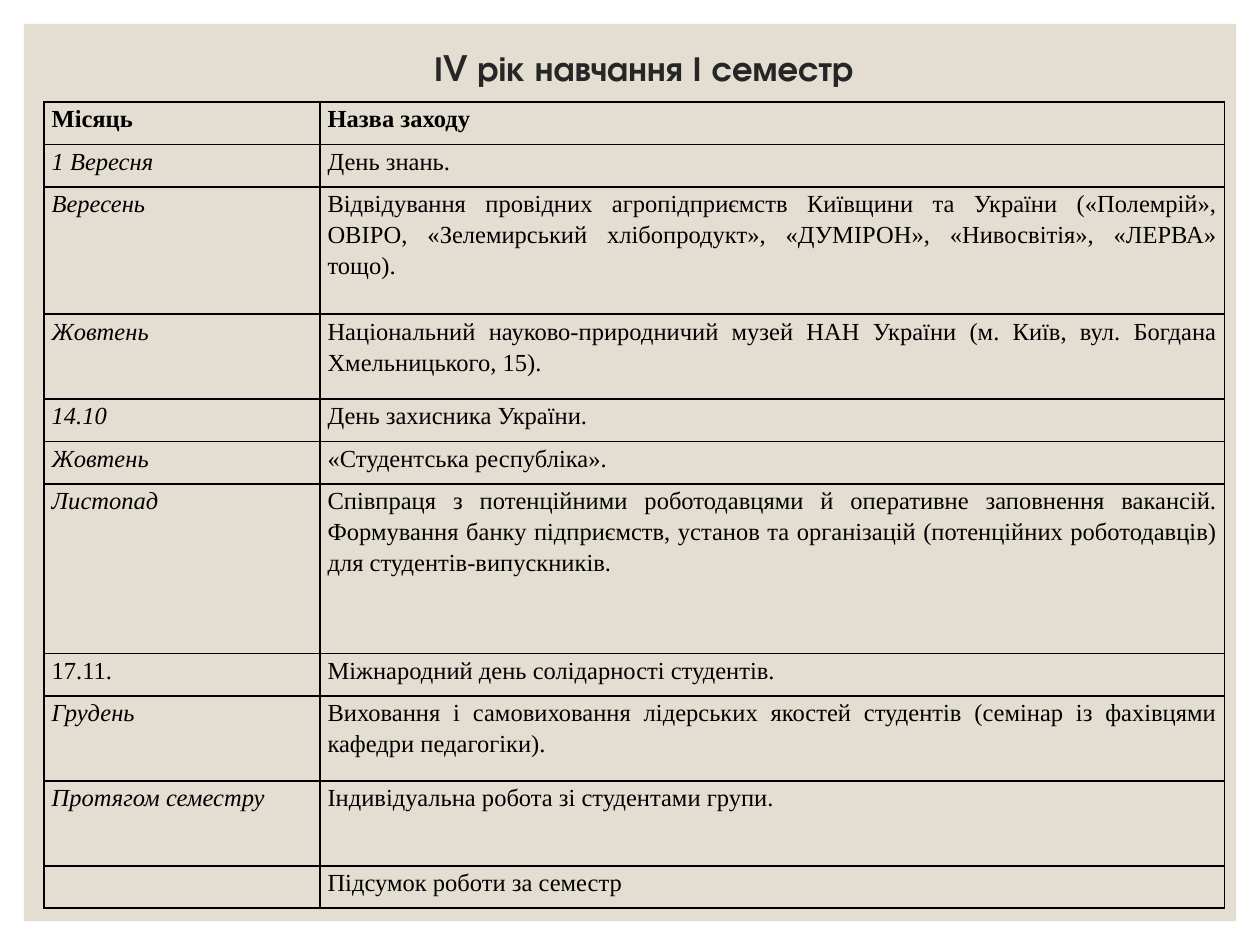
from lxml.etree import SubElement
from pptx import Presentation
from pptx.dml.color import RGBColor
from pptx.enum.shapes import MSO_SHAPE
from pptx.enum.text import MSO_ANCHOR, PP_ALIGN
from pptx.oxml.ns import qn
from pptx.util import Inches, Pt

ROW_UNIT = 6.4 / 19
HEADER = ("Місяць", "Назва заходу")
# Height in row units, month, event
EVENTS = [
    (1, "1 Вересня", "День знань."),
    (3, "Вересень", "Відвідування провідних агропідприємств Київщини та України "
        "(«Полемрій», ОВІРО, «Зелемирський хлібопродукт», «ДУМІРОН», «Нивосвітія», "
        "«ЛЕРВА» тощо)."),
    (2, "Жовтень", "Національний науково-природничий музей НАН України "
        "(м. Київ, вул. Богдана Хмельницького, 15)."),
    (1, "14.10", "День захисника України."),
    (1, "Жовтень", "«Студентська республіка»."),
    (4, "Листопад", "Співпраця з потенційними роботодавцями й оперативне заповнення "
        "вакансій. Формування банку підприємств, установ та організацій "
        "(потенційних роботодавців) для студентів-випускників."),
    (1, "17.11.", "Міжнародний день солідарності студентів."),
    (2, "Грудень", "Виховання і самовиховання лідерських якостей студентів "
        "(семінар із фахівцями кафедри педагогіки)."),
    (2, "Протягом семестру", "Індивідуальна робота зі студентами групи."),
    (1, "", "Підсумок роботи за семестр"),
]
UPRIGHT_MONTHS = {"17.11."}


def color(hex_value):
    return RGBColor.from_string(hex_value)


def style_runs(paragraph, font, size, hex_value, bold=False, italic=False):
    for run in paragraph.runs:
        run.font.name = font
        run.font.size = Pt(size)
        run.font.color.rgb = color(hex_value)
        run.font.bold = bold
        run.font.italic = italic


def add_backdrop(slide, left, top, width, height):
    panel = slide.shapes.add_shape(MSO_SHAPE.RECTANGLE, Inches(left), Inches(top),
                                   Inches(width), Inches(height))
    panel.shadow.inherit = False
    panel.fill.solid()
    panel.fill.fore_color.rgb = color("E3DED1")
    panel.line.fill.background()


def add_title(slide, left, top, width, height):
    title = slide.shapes.add_textbox(Inches(left), Inches(top),
                                     Inches(width), Inches(height))
    frame = title.text_frame
    frame.word_wrap = True
    frame.vertical_anchor = MSO_ANCHOR.MIDDLE
    frame.text = "ІV рік навчання І семестр"
    heading = frame.paragraphs[0]
    heading.alignment = PP_ALIGN.CENTER
    heading.line_spacing = 0.9
    style_runs(heading, "TeX Gyre Adventor", 20, "262626", bold=True)


def set_borders(cell, hex_value, width):
    properties = cell._tc.get_or_add_tcPr()
    for position, side in enumerate(("lnL", "lnR", "lnT", "lnB")):
        border = SubElement(properties, qn(f"a:{side}"), w=str(Pt(width)))
        fill = SubElement(border, qn("a:solidFill"))
        SubElement(fill, qn("a:srgbClr"), val=hex_value)
        properties.insert(position, border)  # borders precede the fill


def fill_cell(cell, text, bold=False, italic=False):
    cell.margin_left = cell.margin_right = Inches(0.06)
    cell.margin_top = cell.margin_bottom = 0
    cell.fill.background()
    set_borders(cell, "000000", 1)
    if text:
        cell.text_frame.text = text
        paragraph = cell.text_frame.paragraphs[0]
        paragraph.alignment = PP_ALIGN.JUSTIFY
        paragraph.line_spacing = 1.15
        style_runs(paragraph, "Times New Roman", 14, "000000", bold, italic)


def add_schedule(slide, left, top, width, height, month_width):
    table = slide.shapes.add_table(len(EVENTS) + 1, 2, Inches(left), Inches(top),
                                   Inches(width), Inches(height)).table
    table.first_row = table.horz_banding = False
    table.columns[0].width = Inches(month_width)
    table.columns[1].width = Inches(width - month_width)

    table.rows[0].height = Inches(ROW_UNIT)
    for column, label in enumerate(HEADER):
        fill_cell(table.cell(0, column), label, bold=True)
    for row, (units, month, event) in enumerate(EVENTS, start=1):
        table.rows[row].height = Inches(ROW_UNIT * units)
        fill_cell(table.cell(row, 0), month, italic=month not in UPRIGHT_MONTHS)
        fill_cell(table.cell(row, 1), event)


def main():
    presentation = Presentation()
    presentation.slide_width = Inches(10)
    presentation.slide_height = Inches(7.5)
    slide = presentation.slides.add_slide(presentation.slide_layouts[6])
    add_backdrop(slide, 0.19, 0.19, 9.62, 7.12)
    add_title(slide, 0.91, 0.29, 8.4, 0.53)
    add_schedule(slide, 0.35, 0.81, 9.37, 6.4, month_width=2.19)
    presentation.save("out.pptx")


if __name__ == "__main__":
    main()
